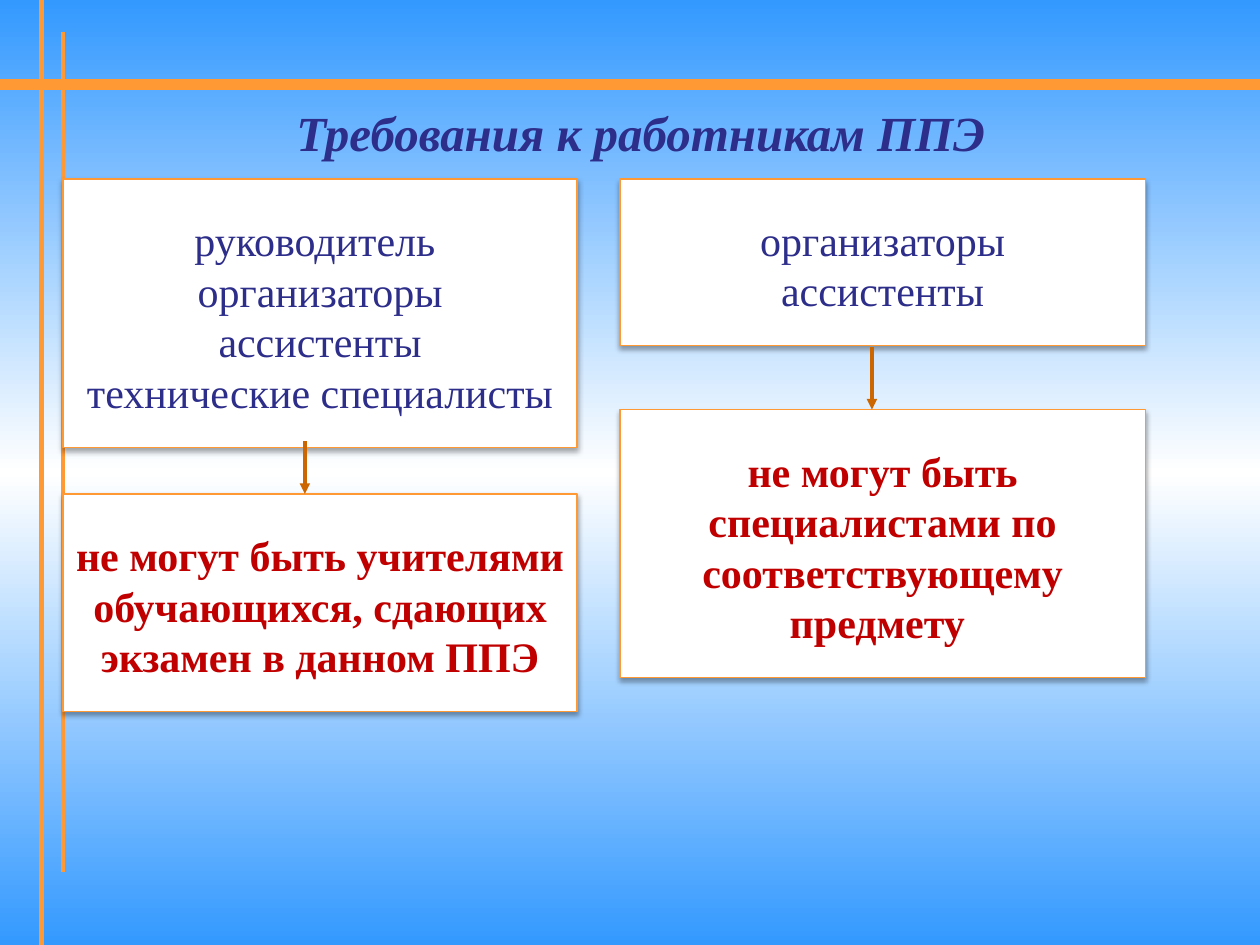
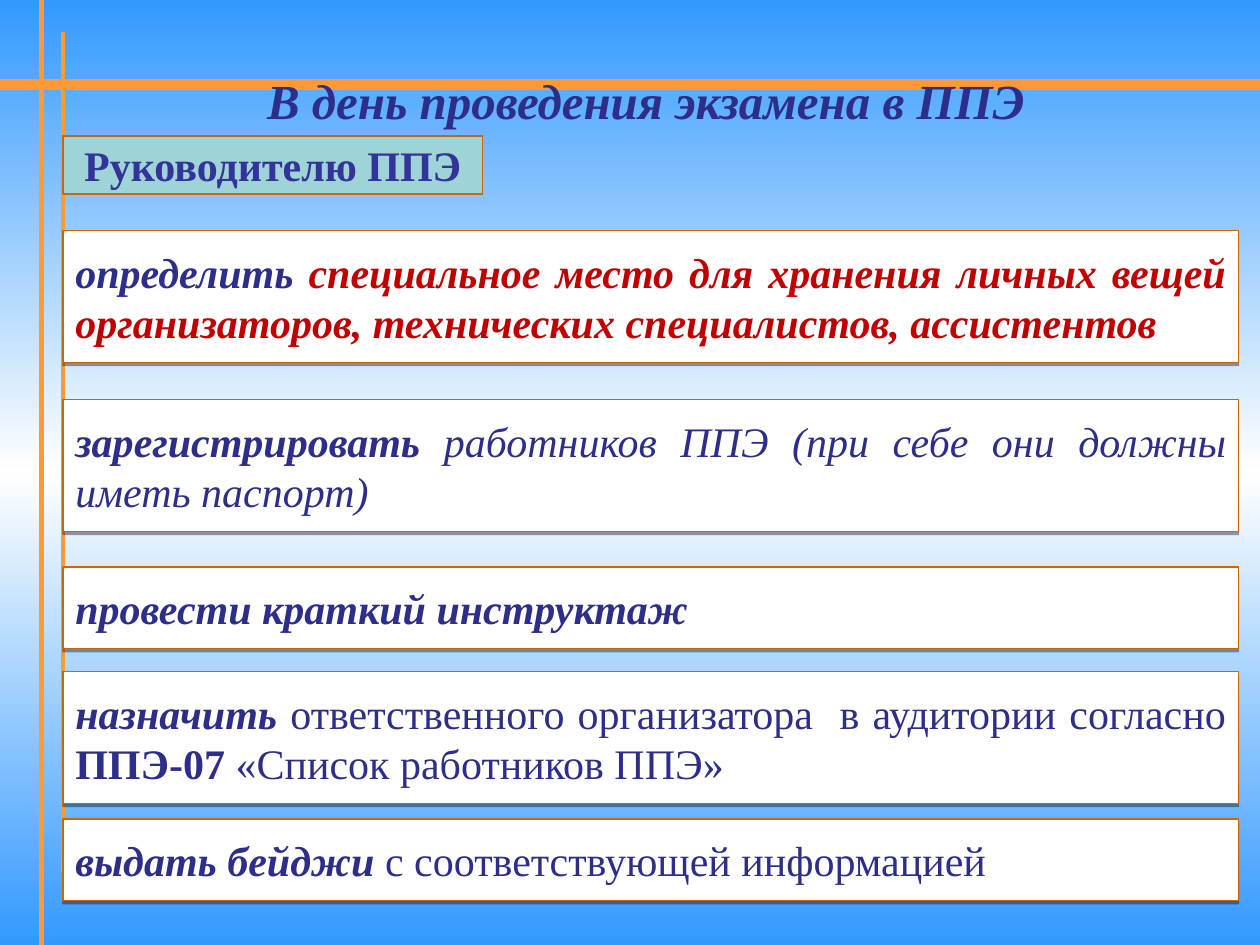
from lxml.etree import SubElement as Sub
from pptx import Presentation
from pptx.dml.color import RGBColor
from pptx.enum.shapes import MSO_CONNECTOR as Link, MSO_SHAPE as Shape
from pptx.enum.text import MSO_ANCHOR as Anchor, MSO_AUTO_SIZE as Fit, PP_ALIGN as Align
from pptx.oxml.ns import qn
from pptx.util import Inches, Pt

SKY = RGBColor(0x33, 0x99, 0xFF)
WHITE = RGBColor(0xFF, 0xFF, 0xFF)
ORANGE = RGBColor(0xFF, 0x99, 0x33)
RUST = RGBColor(0xCC, 0x66, 0x00)
NAVY = RGBColor(0x2D, 0x2D, 0x8A)
INDIGO = RGBColor(0x33, 0x33, 0x99)
RED = RGBColor(0xC0, 0x00, 0x00)
TEAL = RGBColor(0x9E, 0xD3, 0xD7)
FONT = "Times New Roman"
LEFT = 0.5
WIDE = 9.33
SOFT = (35, 3.1, 1.8)
HARD = (38, 0, 1.6)


def backdrop(slide):
    """Paint the sky gradient, light in the middle."""
    slide.background.fill.gradient()
    slide.background.fill.gradient_angle = 90
    stops = slide.element.find(".//" + qn("a:gsLst"))
    for stop in list(stops):
        stops.remove(stop)
    for pos, color in ((0, SKY), (50, WHITE), (100, SKY)):
        stop = Sub(stops, qn("a:gs"), pos=str(pos * 1000))
        Sub(stop, qn("a:srgbClr"), val=str(color))


def rule(slide, start, end, color, width, arrow=False):
    """Draw a straight line, with an arrowhead at its end if asked."""
    line = slide.shapes.add_connector(Link.STRAIGHT, *map(Inches, start + end))
    line.line.color.rgb = color
    line.line.width = Pt(width)
    if arrow:
        Sub(line.line._get_or_add_ln(), qn("a:tailEnd"), type="triangle")
    Sub(line._element.spPr, qn("a:effectLst"))


def bands(slide):
    """Draw the three orange rules that every slide carries."""
    rule(slide, (0, 0.67), (10, 0.67), ORANGE, 6)
    rule(slide, (0.33, 0), (0.33, 7.5), ORANGE, 3)
    rule(slide, (LEFT, 0.25), (LEFT, 6.92), ORANGE, 2.25)


def write(shape, paras, pad, align, size=24, anchor=Anchor.MIDDLE):
    """Fill a shape with paragraphs of (text, style, colour) runs."""
    frame = shape.text_frame
    frame.word_wrap = True
    frame.auto_size = Fit.NONE
    frame.vertical_anchor = anchor
    side, top, base = pad
    frame.margin_left = frame.margin_right = Inches(side)
    frame.margin_top, frame.margin_bottom = Inches(top), Inches(base)
    for i, runs in enumerate(paras):
        para = frame.add_paragraph() if i else frame.paragraphs[0]
        para.alignment = align
        for text, style, color in runs:
            run = para.add_run()
            run.text = text
            font = run.font
            font.name, font.size = FONT, Pt(size)
            font.bold, font.italic = "b" in style, "i" in style
            font.color.rgb = color


def title(slide, text, box, pad=(0.1, 0.05, 0.05), anchor=Anchor.MIDDLE):
    """Write the slide title in bold italics."""
    area = slide.shapes.add_textbox(*map(Inches, box))
    write(area, [[(text, "bi", NAVY)]], pad, Align.CENTER, 28, anchor)


def panel(slide, box, fill, edge, shade=None):
    """Add a thinly edged rectangle with an optional drop shadow."""
    rect = slide.shapes.add_shape(Shape.RECTANGLE, *map(Inches, box))
    rect.fill.solid()
    rect.fill.fore_color.rgb = fill
    rect.line.color.rgb = edge
    rect.line.width = Pt(0.75)
    rect.shadow.inherit = False
    if shade:
        alpha, blur, dist = shade
        effects = rect._element.spPr.find(qn("a:effectLst"))
        drop = Sub(effects, qn("a:outerShdw"), blurRad=str(Pt(blur)),
                   dist=str(Pt(dist)), dir="5400000", rotWithShape="0")
        color = Sub(drop, qn("a:srgbClr"), val="000000")
        Sub(color, qn("a:alpha"), val=str(alpha * 1000))
    return rect


def column(slide, box, roles, ban, split, drop, arrow):
    """Stack a box of roles over a box with what they may not be."""
    left, top, width, height = box
    low = top + height - drop
    parts = (
        ((left, top, width, split), [[(role, "", NAVY)] for role in roles]),
        ((left, low, width, drop), [[(ban, "b", RED)]]),
    )
    for area, paras in parts:
        rect = panel(slide, area, WHITE, ORANGE, SOFT)
        write(rect, paras, (0.1, 0.28, 0.24), Align.CENTER)
    shift, start = arrow
    rule(slide, (left + shift, top + start), (left + shift, low), RUST, 2, True)


def task(slide, box, runs):
    """Add one justified duty box."""
    rect = panel(slide, box, WHITE, RUST, HARD)
    write(rect, [runs], (0.1, 0.12, 0.12), Align.JUSTIFY)


def staff(slide):
    """Build the slide on demands made of the staff."""
    title(slide, "Требования к работникам ППЭ", (0.42, 0.67, 9.33, 0.75))
    column(slide, (LEFT, 1.42, 4.08, 4.23),
           ("руководитель ", "организаторы", "ассистенты", "технические специалисты"),
           "не могут быть учителями обучающихся, сдающих экзамен в данном ППЭ",
           2.13, 1.73, (1.92, 2.08))
    column(slide, (4.92, 1.42, 4.17, 3.96),
           ("организаторы", "ассистенты"),
           "не могут быть специалистами по соответствующему предмету ",
           1.32, 2.13, (2, 1.33))


def duties(slide):
    """Build the slide on the head's duties on exam day."""
    title(slide, "В день проведения экзамена в ППЭ", (0.25, 0.4, 9.75, 0.83),
          (0.1, 0.16, 0.2), Anchor.TOP)
    tasks = (
        (1.83, 1.05, [("определить ", "bi", NAVY),
                      ("специальное место для хранения личных вещей организаторов, "
                       "технических специалистов, ассистентов", "bi", RED)]),
        (3.17, 1.05, [("зарегистрировать ", "bi", NAVY),
                      ("работников ППЭ (при себе они должны иметь паспорт)", "i", NAVY)]),
        (4.5, 0.65, [("провести краткий инструктаж ", "bi", NAVY)]),
        (5.33, 1.05, [("назначить", "bi", NAVY),
                      (" ответственного организатора  в аудитории согласно ", "", NAVY),
                      ("ППЭ-07 ", "b", NAVY),
                      ("«Список работников ППЭ»", "", NAVY)]),
        (6.5, 0.65, [("выдать бейджи ", "bi", NAVY),
                     ("с соответствующей информацией", "", NAVY)]),
    )
    for top, height, runs in tasks:
        task(slide, (LEFT, top, WIDE, height), runs)
    tag = panel(slide, (LEFT, 1.08, 3.33, 0.46), TEAL, RUST)
    write(tag, [[("Руководителю ППЭ", "b", INDIGO)]], (0.06, 0.03, 0.03), Align.CENTER)


def main():
    """Build and save the deck."""
    deck = Presentation()
    deck.slide_width, deck.slide_height = Inches(10), Inches(7.5)
    for build in (staff, duties):
        slide = deck.slides.add_slide(deck.slide_layouts[6])
        backdrop(slide)
        bands(slide)
        build(slide)
    deck.save("out.pptx")


if __name__ == "__main__":
    main()
